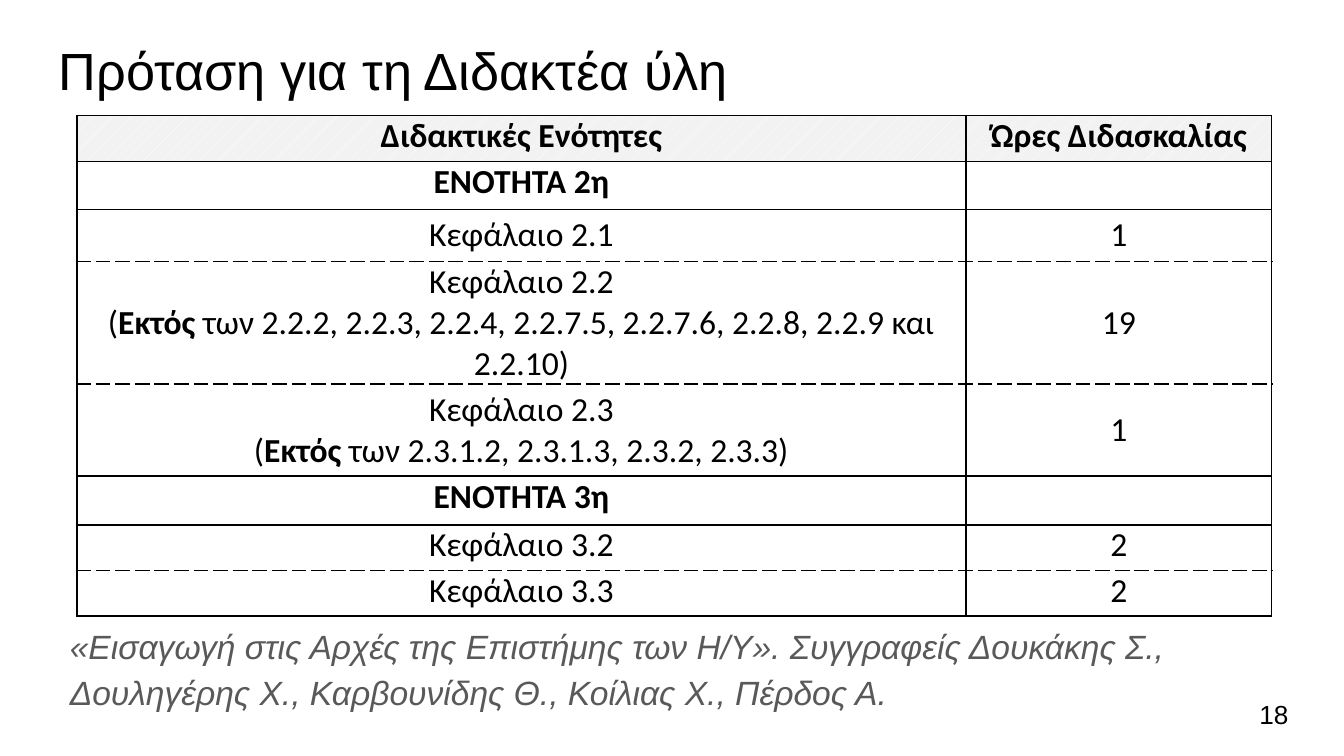
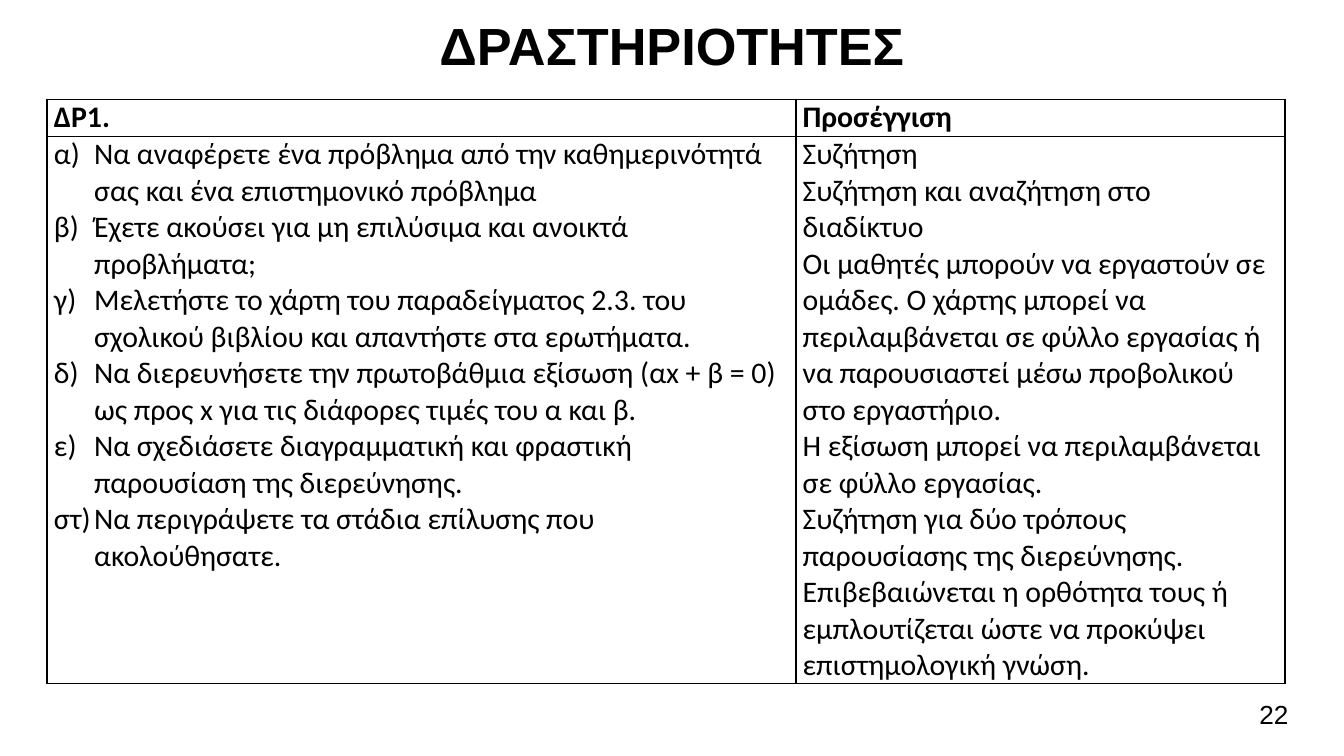
"""Build two slides on teaching units and activities, each with a ruled table."""
from lxml.etree import SubElement
from pptx import Presentation
from pptx.dml.color import RGBColor
from pptx.enum.dml import MSO_PATTERN
from pptx.enum.text import MSO_ANCHOR, PP_ALIGN
from pptx.oxml.ns import qn
from pptx.util import Cm, Pt

BLACK, GRAY, HEADER, WHITE = "000000", "595959", "F2F2F2", "FFFFFF"
HEADING_FONT, TABLE_FONT = "Arial", "Calibri"
LEFT, CENTER = PP_ALIGN.LEFT, PP_ALIGN.CENTER
TOP, MIDDLE = MSO_ANCHOR.TOP, MSO_ANCHOR.MIDDLE


def write_text(frame, paragraphs, font, size, color=BLACK, align=LEFT, italic=False):
    """Fill a frame with paragraphs, each a list of (text, bold) runs."""
    for index, runs in enumerate(paragraphs):
        paragraph = frame.paragraphs[0] if index == 0 else frame.add_paragraph()
        paragraph.alignment = align
        for text, bold in runs:
            run = paragraph.add_run()
            run.text = text
            run.font.name = font
            run.font.size = Pt(size)
            run.font.bold = bold
            run.font.italic = italic
            run.font.color.rgb = RGBColor.from_string(color)


def add_grid(slide, left, top, widths, heights, inset, dashed_rows=()):
    """Add an unfilled table with black rules, dashed below the given rows."""
    table = slide.shapes.add_table(
        len(heights), len(widths), Cm(left), Cm(top), Cm(sum(widths)), Cm(sum(heights))
    ).table
    table.first_row = table.horz_banding = False
    for column, width in zip(table.columns, widths):
        column.width = Cm(width)
    for index, height in enumerate(heights):
        table.rows[index].height = Cm(height)
        for cell in table.rows[index].cells:
            cell.margin_left = cell.margin_right = Cm(inset)
            cell.margin_top = cell.margin_bottom = 0
            cell.fill.background()
            properties = cell._tc.get_or_add_tcPr()
            edges = {"L": False, "R": False, "T": index - 1 in dashed_rows, "B": index in dashed_rows}
            for position, (edge, dashed) in enumerate(edges.items()):
                line = SubElement(properties, qn("a:ln" + edge), w=str(Pt(1)))
                SubElement(SubElement(line, qn("a:solidFill")), qn("a:srgbClr"), val=BLACK)
                SubElement(line, qn("a:prstDash"), val="dash" if dashed else "solid")
                properties.insert(position, line)
    return table


presentation = Presentation()
presentation.slide_width = Cm(25.4)
presentation.slide_height = Cm(14.29)

headings = [
    ("Πρόταση για τη Διδακτέα ύλη", False, LEFT, 0.48, "18"),
    ("ΔΡΑΣΤΗΡΙΟΤΗΤΕΣ", True, CENTER, 0, "22"),
]
slides = []
for title, bold, align, top, number in headings:
    slide = presentation.slides.add_slide(presentation.slide_layouts[6])
    slides.append(slide)
    title_frame = slide.shapes.add_textbox(Cm(0.86), Cm(top), Cm(23.67), Cm(1.6)).text_frame
    number_frame = slide.shapes.add_textbox(Cm(23.55), Cm(12.95), Cm(1.52), Cm(1.09)).text_frame
    for frame in (title_frame, number_frame):
        frame.word_wrap = True
        frame.margin_left = frame.margin_right = frame.margin_top = frame.margin_bottom = Cm(0.25)
    number_frame.vertical_anchor = MIDDLE
    write_text(title_frame, [[(title, bold)]], HEADING_FONT, 28, align=align)
    write_text(number_frame, [[(number, False)]], HEADING_FONT, 14)
units_slide, activities_slide = slides

units = [
    ([[("Διδακτικές Ενότητες", True)]], "Ώρες Διδασκαλίας", 0.87, TOP),
    ([[("ΕΝΟΤΗΤΑ 2η", True)]], "", 0.91, TOP),
    ([[("Κεφάλαιο 2.1", False)]], "1", 0.98, MIDDLE),
    ([[("Κεφάλαιο 2.2", False)],
      [("(", False), ("Εκτός", True),
       (" των 2.2.2, 2.2.3, 2.2.4, 2.2.7.5, 2.2.7.6, 2.2.8, 2.2.9 και 2.2.10)", False)]],
     "19", 2.32, MIDDLE),
    ([[("Κεφάλαιο 2.3", False)],
      [("(", False), ("Εκτός", True), (" των 2.3.1.2, 2.3.1.3, 2.3.2, 2.3.3)", False)]],
     "1", 1.74, MIDDLE),
    ([[("ΕΝΟΤΗΤΑ 3η", True)]], "", 0.92, TOP),
    ([[("Κεφάλαιο 3.2", False)]], "2", 0.86, TOP),
    ([[("Κεφάλαιο 3.3", False)]], "2", 0.86, TOP),
]
heights = [height for _, _, height, _ in units]
units_table = add_grid(units_slide, 1.45, 2.18, [16.81, 5.77], heights, 0.18, dashed_rows=(2, 3, 6))
for index, (unit, hours, _, anchor) in enumerate(units):
    unit_cell, hours_cell = units_table.rows[index].cells
    unit_cell.vertical_anchor = hours_cell.vertical_anchor = anchor
    write_text(unit_cell.text_frame, unit, TABLE_FONT, 18, align=CENTER)
    if hours:
        write_text(hours_cell.text_frame, [[(hours, index == 0)]], TABLE_FONT, 18, align=CENTER)
for cell in units_table.rows[0].cells:
    cell.fill.patterned()
    cell.fill.pattern = MSO_PATTERN.PERCENT_5
    cell.fill.fore_color.rgb = RGBColor.from_string(WHITE)
    cell.fill.back_color.rgb = RGBColor.from_string(HEADER)

book = ("«Εισαγωγή στις Αρχές της Επιστήμης των Η/Υ». Συγγραφείς Δουκάκης Σ., "
        "Δουληγέρης Χ., Καρβουνίδης Θ., Κοίλιας Χ., Πέρδος Α.")
book_frame = units_slide.shapes.add_textbox(Cm(1.07), Cm(11.46), Cm(23.67), Cm(2.77)).text_frame
book_frame.word_wrap = True
book_frame.margin_left = book_frame.margin_right = Cm(0.25)
book_frame.margin_top = book_frame.margin_bottom = Cm(0.25)
write_text(book_frame, [[(book, False)]], HEADING_FONT, 18, color=GRAY, italic=True)
book_frame.paragraphs[0].line_spacing = 1.15
book_frame.paragraphs[0].space_after = Pt(16)

questions = [
    "α)\tΝα αναφέρετε ένα πρόβλημα από την καθημερινότητά σας και ένα επιστημονικό πρόβλημα",
    "β)\tΈχετε ακούσει για μη επιλύσιμα και ανοικτά προβλήματα;",
    "γ)\tΜελετήστε το χάρτη του παραδείγματος 2.3. του σχολικού βιβλίου και απαντήστε στα ερωτήματα.",
    "δ)\tΝα διερευνήσετε την πρωτοβάθμια εξίσωση (αx + β = 0) ως προς x για τις διάφορες τιμές του α και β.",
    "ε)\tΝα σχεδιάσετε διαγραμματική και φραστική παρουσίαση της διερεύνησης.",
    "στ)\tΝα περιγράψετε τα στάδια επίλυσης που ακολούθησατε.",
]
approaches = [
    "Συζήτηση",
    "Συζήτηση και αναζήτηση στο διαδίκτυο",
    "Οι μαθητές μπορούν να εργαστούν σε ομάδες. Ο χάρτης μπορεί να περιλαμβάνεται σε φύλλο "
    "εργασίας ή να παρουσιαστεί μέσω προβολικού στο εργαστήριο.",
    "Η εξίσωση μπορεί να περιλαμβάνεται σε φύλλο εργασίας.",
    "Συζήτηση για δύο τρόπους παρουσίασης της διερεύνησης.",
    "Επιβεβαιώνεται η ορθότητα τους ή εμπλουτίζεται ώστε να προκύψει επιστημολογική γνώση.",
]
activities_table = add_grid(activities_slide, 0.89, 1.88, [14.15, 9.25], [0.7, 10.34], 0.13)
for column, (header, lines) in enumerate([("ΔΡ1.", questions), ("Προσέγγιση", approaches)]):
    write_text(activities_table.cell(0, column).text_frame, [[(header, True)]], TABLE_FONT, 16)
    write_text(activities_table.cell(1, column).text_frame, [[(line, False)] for line in lines], TABLE_FONT, 16)
for paragraph in activities_table.cell(1, 0).text_frame.paragraphs:
    properties = paragraph._p.get_or_add_pPr()
    properties.set("marL", str(Cm(0.76)))
    properties.set("indent", str(-Cm(0.76)))

presentation.save("out.pptx")
